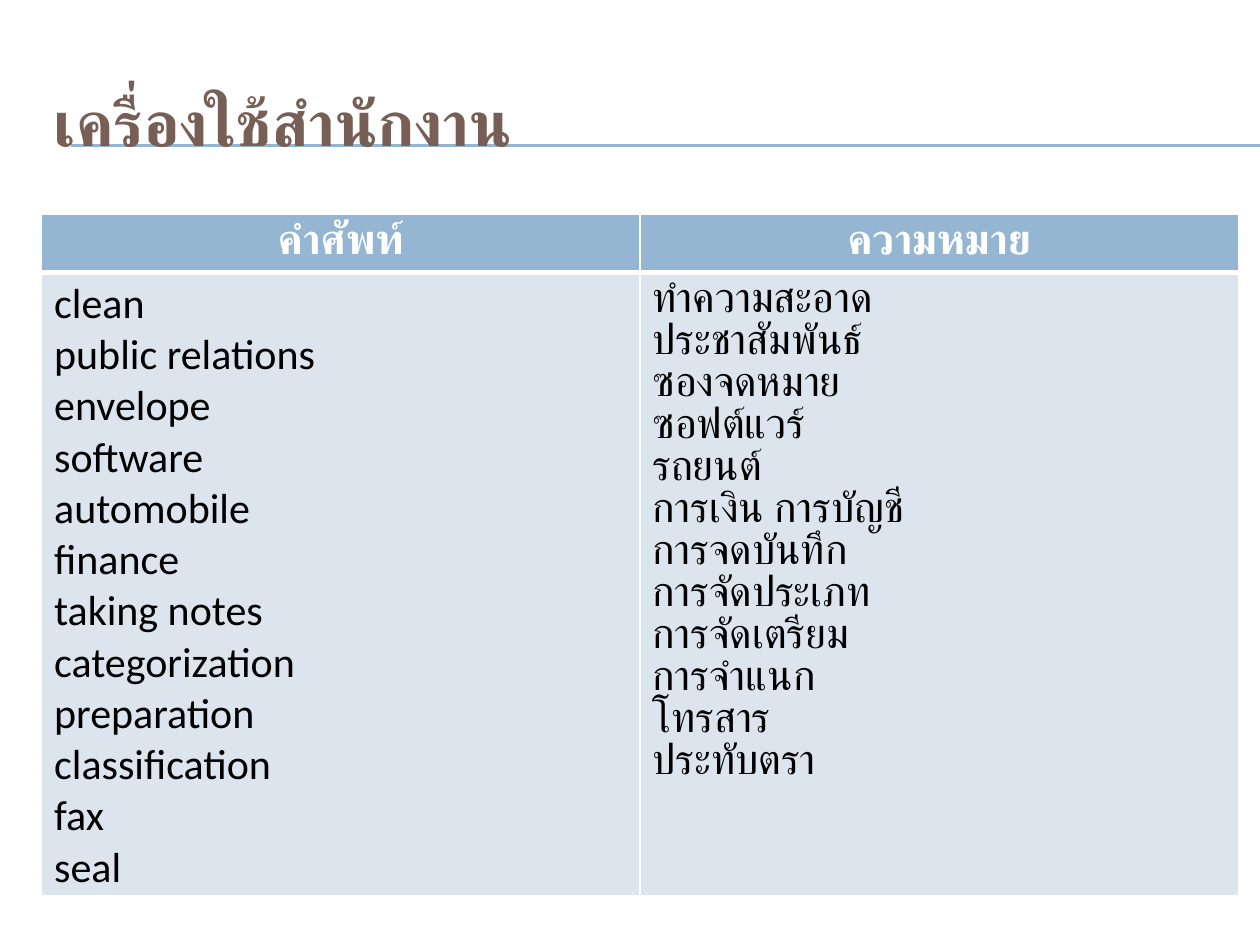
from dataclasses import dataclass

from lxml import etree
from pptx import Presentation, util as u
from pptx.dml import color
from pptx.enum import shapes, text
from pptx.oxml import ns


@dataclass(frozen=True)
class Theme:
    heading: str = "775F55"
    accent: str = "94B6D2"
    body_fill: str = "DCE5EE"
    white: str = "FFFFFF"
    black: str = "000000"
    title_font: str = "Cabin"
    table_font: str = "Calibri"
    title_size: int = 36
    table_size: int = 24


THEME = Theme()
TITLE = "เครื่องใช้สำนักงาน"
HEADINGS = ("คำศัพท์", "ความหมาย")
VOCABULARY = (
    ("clean", "ทำความสะอาด"),
    ("public relations", "ประชาสัมพันธ์"),
    ("envelope", "ซองจดหมาย"),
    ("software", "ซอฟต์แวร์"),
    ("automobile", "รถยนต์"),
    ("finance", "การเงิน การบัญชี"),
    ("taking notes", "การจดบันทึก"),
    ("categorization", "การจัดประเภท"),
    ("preparation", "การจัดเตรียม"),
    ("classification", "การจำแนก"),
    ("fax", "โทรสาร"),
    ("seal", "ประทับตรา"),
)


def rgb(value):
    return color.RGBColor.from_string(value)


def write(frame, lines, *, font, size, ink, bold=False, align=None, spacing=None):
    for index, line in enumerate(lines):
        paragraph = frame.add_paragraph() if index else frame.paragraphs[0]
        paragraph.alignment = align
        paragraph.line_spacing = spacing
        run = paragraph.add_run()
        run.text = line
        run.font.name = font
        run.font.size = u.Pt(size)
        run.font.bold = bold
        run.font.color.rgb = rgb(ink)


def add_rule(slide, y):
    rule = slide.shapes.add_connector(
        shapes.MSO_CONNECTOR.STRAIGHT, u.Inches(0.56), u.Inches(y), u.Inches(10), u.Inches(y)
    )
    rule.line.color.rgb = rgb(THEME.accent)
    rule.line.width = u.Pt(0.75)
    etree.SubElement(rule.element.spPr, ns.qn("a:effectLst"))


def add_title(slide):
    title = slide.shapes.add_textbox(u.Inches(0.33), u.Inches(0.5), u.Inches(9.5), u.Inches(0.92))
    frame = title.text_frame
    frame.word_wrap = True
    frame.vertical_anchor = text.MSO_ANCHOR.MIDDLE
    write(frame, [TITLE], font=THEME.title_font, size=THEME.title_size,
          ink=THEME.heading, bold=True)


def style_cell(cell, fill, top=1, bottom=1):
    properties = cell._tc.get_or_add_tcPr()
    for side, width in (("L", 1), ("R", 1), ("T", top), ("B", bottom)):
        border = etree.SubElement(properties, ns.qn(f"a:ln{side}"), w=str(u.Pt(width)))
        solid = etree.SubElement(border, ns.qn("a:solidFill"))
        etree.SubElement(solid, ns.qn("a:srgbClr"), val=THEME.white)
    cell.fill.solid()
    cell.fill.fore_color.rgb = rgb(fill)


def add_vocabulary(slide):
    table = slide.shapes.add_table(
        2, 2, u.Inches(0.33), u.Inches(1.7), u.Inches(9.5), u.Inches(5.36)
    ).table
    table.horz_banding = False
    table.rows[0].height = u.Inches(0.41)
    table.rows[1].height = u.Inches(4.95)
    for column, (heading, entries) in enumerate(zip(HEADINGS, zip(*VOCABULARY))):
        header, body = table.cell(0, column), table.cell(1, column)
        style_cell(header, THEME.accent, bottom=3)
        style_cell(body, THEME.body_fill, top=3)
        header.margin_left = header.margin_right = u.Inches(0.07)
        header.margin_top = header.margin_bottom = 0
        write(header.text_frame, [heading], font=THEME.table_font, size=THEME.table_size,
              ink=THEME.white, bold=True, align=text.PP_ALIGN.CENTER, spacing=1.15)
        write(body.text_frame, entries, font=THEME.table_font, size=THEME.table_size,
              ink=THEME.black)


def main():
    presentation = Presentation()
    presentation.slide_width, presentation.slide_height = u.Inches(10), u.Inches(7.5)
    slide = presentation.slides.add_slide(presentation.slide_layouts[6])
    for y in (1.15, 1.16):
        add_rule(slide, y)
    add_title(slide)
    add_vocabulary(slide)
    presentation.save("out.pptx")


if __name__ == "__main__":
    main()
